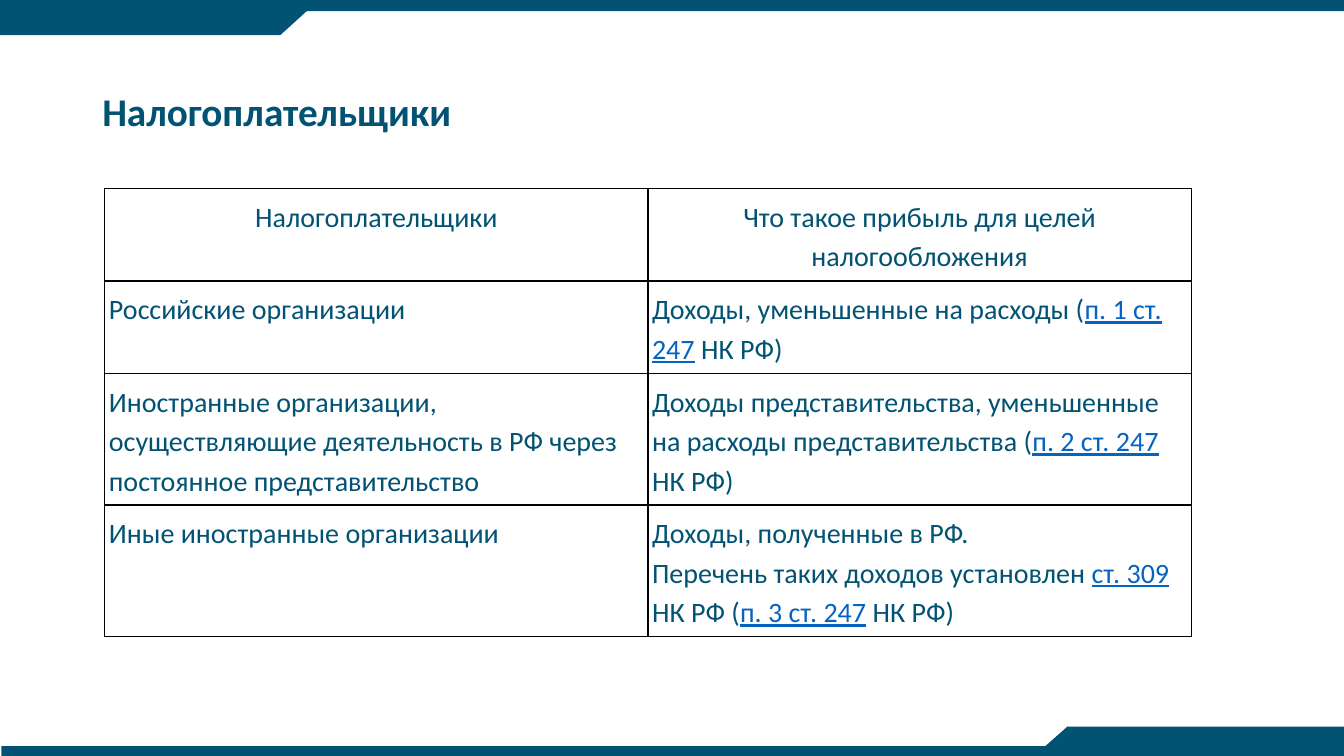
import pptx
import pptx.util
import pptx.dml.color
import pptx.enum.shapes
import pptx.enum.text
import pptx.oxml
import pptx.oxml.ns

Pt = pptx.util.Pt
SHAPES = pptx.enum.shapes.MSO_SHAPE
ALIGN = pptx.enum.text.PP_ALIGN
TEAL = "025373"
LINK = "0563C1"
WIDTH, HEIGHT = 960, 540


def color(value):
    return pptx.dml.color.RGBColor.from_string(value)


def add_run(para, text, size, value):
    span = para.add_run()
    span.text = text
    span.font.name = "Calibri"
    span.font.size = Pt(size)
    span.font.color.rgb = color(value)
    return span


deck = pptx.Presentation()
deck.slide_width, deck.slide_height = Pt(WIDTH), Pt(HEIGHT)
page = deck.slides.add_slide(deck.slide_layouts[6])

banners = [
    (SHAPES.RECTANGLE, 0, 0, WIDTH, 8, 0),
    (SHAPES.RECTANGLE, 1, 533, WIDTH - 1, 7, 0),
    (SHAPES.RECTANGLE, 0, 3.6, 200, 21.6, 0),
    (SHAPES.FLOWCHART_MERGE, 176.4, 3.6, 47.5, 21.6, 0),
    (SHAPES.RECTANGLE, 762.5, 519, WIDTH - 762.5, 21, 0),
    (SHAPES.FLOWCHART_MERGE, 738.7, 519, 47.5, 21, 180),
]
for kind, left, top, width, height, rotation in banners:
    banner = page.shapes.add_shape(kind, Pt(left), Pt(top), Pt(width), Pt(height))
    banner.rotation = rotation
    banner.shadow.inherit = False
    banner.fill.solid()
    banner.fill.fore_color.rgb = color(TEAL)
    banner.line.fill.background()

title = page.shapes.add_textbox(Pt(66), Pt(28.8), Pt(828), Pt(104.4))
title.text_frame.word_wrap = True
title.text_frame.vertical_anchor = pptx.enum.text.MSO_ANCHOR.MIDDLE
title_para = title.text_frame.paragraphs[0]
title_para.line_spacing = 0.9
add_run(title_para, "Налогоплательщики", 28, TEAL).font.bold = True

# Text between vertical bars is styled as a link.
rows = [
    (66, ["Налогоплательщики"], ["Что такое прибыль для целей налогообложения"]),
    (66, ["Российские организации"],
     ["Доходы, уменьшенные на расходы (|п. 1 ст. 247| НК РФ)"]),
    (94, ["Иностранные организации, осуществляющие деятельность в РФ через "
          "постоянное представительство"],
     ["Доходы представительства, уменьшенные на расходы представительства "
      "(|п. 2 ст. 247| НК РФ)"]),
    (94, ["Иные иностранные организации"],
     ["Доходы, полученные в РФ.",
      "Перечень таких доходов установлен |ст. 309| НК РФ (|п. 3 ст. 247| НК РФ)"]),
]
table = page.shapes.add_table(
    len(rows), 2, Pt(74.9), Pt(134.8), Pt(776), Pt(320)).table
table.first_row = False
table.horz_banding = False
for column in table.columns:
    column.width = Pt(388)

for row_index, (height, *texts) in enumerate(rows):
    table.rows[row_index].height = Pt(height)
    for column_index, lines in enumerate(texts):
        cell = table.cell(row_index, column_index)
        cell.margin_left = cell.margin_right = Pt(2.9)
        cell.margin_top = cell.margin_bottom = Pt(5)
        properties = cell._tc.get_or_add_tcPr()
        for side in ("lnL", "lnR", "lnT", "lnB"):
            properties.append(pptx.oxml.parse_xml(
                f'<a:{side} {pptx.oxml.ns.nsdecls("a")} w="{Pt(1)}">'
                f'<a:solidFill><a:srgbClr val="000000"/></a:solidFill></a:{side}>'))
        cell.fill.background()
        for line_index, line in enumerate(lines):
            frame = cell.text_frame
            para = frame.add_paragraph() if line_index else frame.paragraphs[0]
            para.line_spacing = 1.15
            para.alignment = ALIGN.LEFT if row_index else ALIGN.CENTER
            for part_index, part in enumerate(line.split("|")):
                is_link = part_index % 2 == 1
                span = add_run(para, part, 20, LINK if is_link else TEAL)
                span.font.underline = is_link

deck.save("out.pptx")
